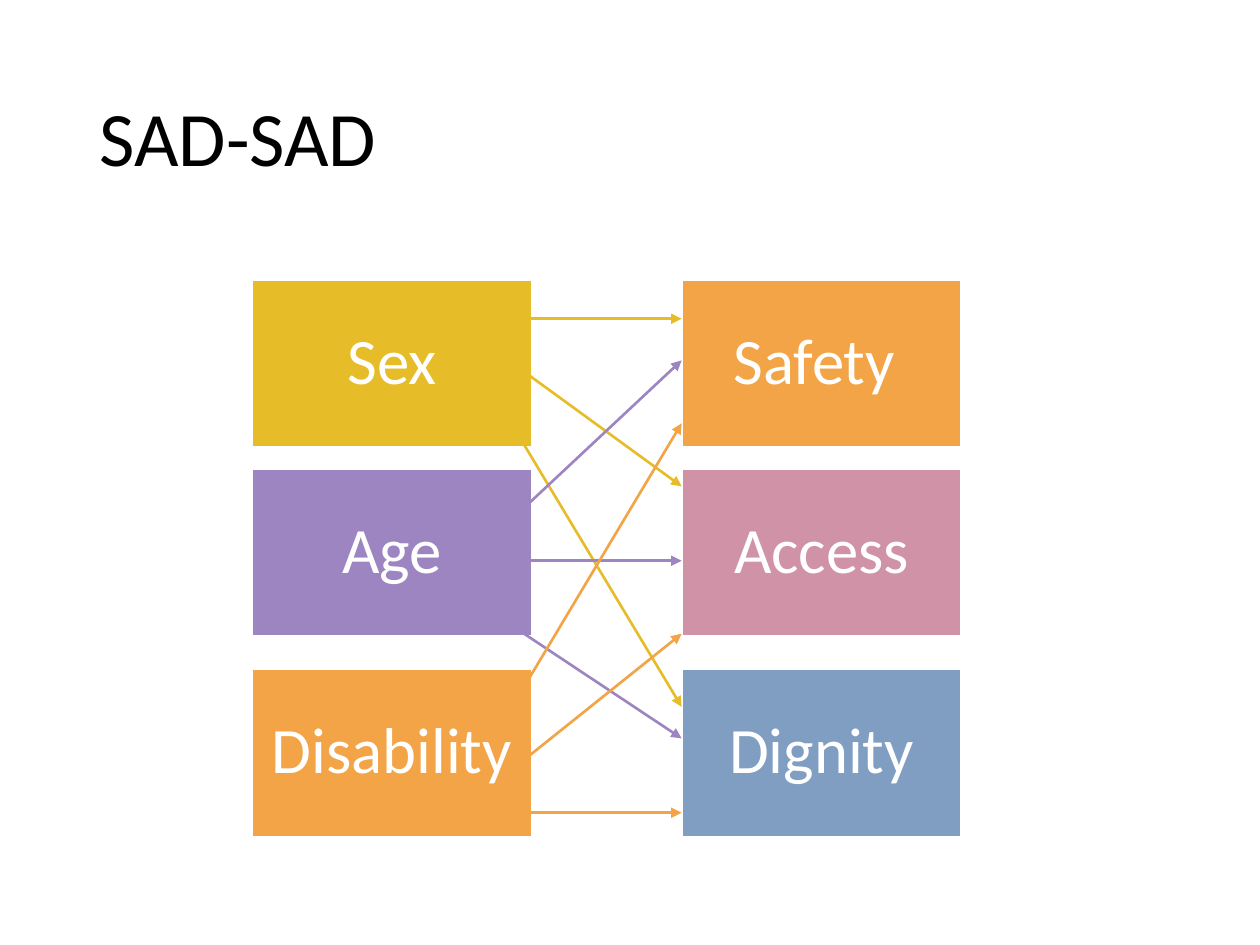
from lxml import etree
from pptx import Presentation
from pptx.dml.color import RGBColor
from pptx.enum.shapes import MSO_CONNECTOR as Connector, MSO_SHAPE as Shape
from pptx.enum.text import MSO_ANCHOR as Anchor, PP_ALIGN as Align
from pptx.oxml.ns import qn
from pptx.util import Inches, Pt

FONT = "Calibri"
WHITE, BLACK = "FFFFFF", "000000"
YELLOW, PURPLE, ORANGE = "E7BC29", "9C85C0", "F3A447"
PINK, BLUE = "D092A7", "809EC2"

BOX_WIDTH, BOX_HEIGHT = 2.22, 1.33
RIGHT_COLUMN = 3.41  # offset of the right column from the left one
ROWS = (0, 1.5, 3.09)

# Each row: left label and colour, right label and colour
PAIRS = [
    ("Sex", YELLOW, "Safety ", ORANGE),
    ("Age", PURPLE, "Access", PINK),
    ("Disability", ORANGE, "Dignity", BLUE),
]

# Each arrow: colour, start height and end height within the diagram
ARROWS = [
    (YELLOW, 0.31, 0.31), (YELLOW, 0.73, 1.64), (YELLOW, 1.31, 3.39),
    (PURPLE, 1.81, 0.64), (PURPLE, 2.23, 2.23), (PURPLE, 2.81, 3.64),
    (ORANGE, 4.23, 4.23), (ORANGE, 3.81, 2.81), (ORANGE, 3.23, 1.14),
]


def color(value):
    return RGBColor.from_string(value)


def write(frame, text, size, text_color, align):
    frame.word_wrap = True
    frame.vertical_anchor = Anchor.MIDDLE
    para = frame.paragraphs[0]
    para.alignment = align
    para.line_spacing = 0.9
    span = para.add_run()
    span.text = text
    span.font.name = FONT
    span.font.size = Pt(size)
    span.font.color.rgb = color(text_color)


def add_title(page, left, top, width, height):
    box = page.shapes.add_textbox(
        Inches(left), Inches(top), Inches(width), Inches(height))
    write(box.text_frame, "SAD-SAD", 44, BLACK, Align.LEFT)


def add_block(page, left, top, text, fill):
    box = page.shapes.add_shape(
        Shape.RECTANGLE, Inches(left), Inches(top),
        Inches(BOX_WIDTH), Inches(BOX_HEIGHT))
    box.shadow.inherit = False
    box.fill.solid()
    box.fill.fore_color.rgb = color(fill)
    box.line.color.rgb = color(WHITE)
    box.line.width = Pt(1)
    frame = box.text_frame
    frame.margin_left = frame.margin_right = Inches(0.15)
    frame.margin_top = frame.margin_bottom = Inches(0.15)
    write(frame, text, 37, WHITE, Align.CENTER)


def add_arrow(page, start, end, line_color):
    arrow = page.shapes.add_connector(
        Connector.STRAIGHT, *map(Inches, start + end))
    arrow.line.color.rgb = color(line_color)
    arrow.line.width = Pt(1.5)
    outline = arrow.line._get_or_add_ln()
    etree.SubElement(outline, qn("a:tailEnd"), type="triangle")
    etree.SubElement(arrow._element.spPr, qn("a:effectLst"))


def add_diagram(page, left, top):
    # Two columns of blocks
    for row, (cause, cause_fill, effect, effect_fill) in zip(ROWS, PAIRS):
        add_block(page, left + RIGHT_COLUMN, top + row, effect, effect_fill)
        add_block(page, left, top + row, cause, cause_fill)

    # Every left block points to every right block
    for line_color, start, end in ARROWS:
        add_arrow(page, (left + 2.16, top + start),
                  (left + RIGHT_COLUMN, top + end), line_color)


def main():
    deck = Presentation()
    deck.slide_width, deck.slide_height = Inches(10), Inches(7.5)
    page = deck.slides.add_slide(deck.slide_layouts[6])
    add_diagram(page, 2, 2.22)
    add_title(page, 0.69, 0.4, 8.62, 1.45)
    deck.save("out.pptx")


if __name__ == "__main__":
    main()
